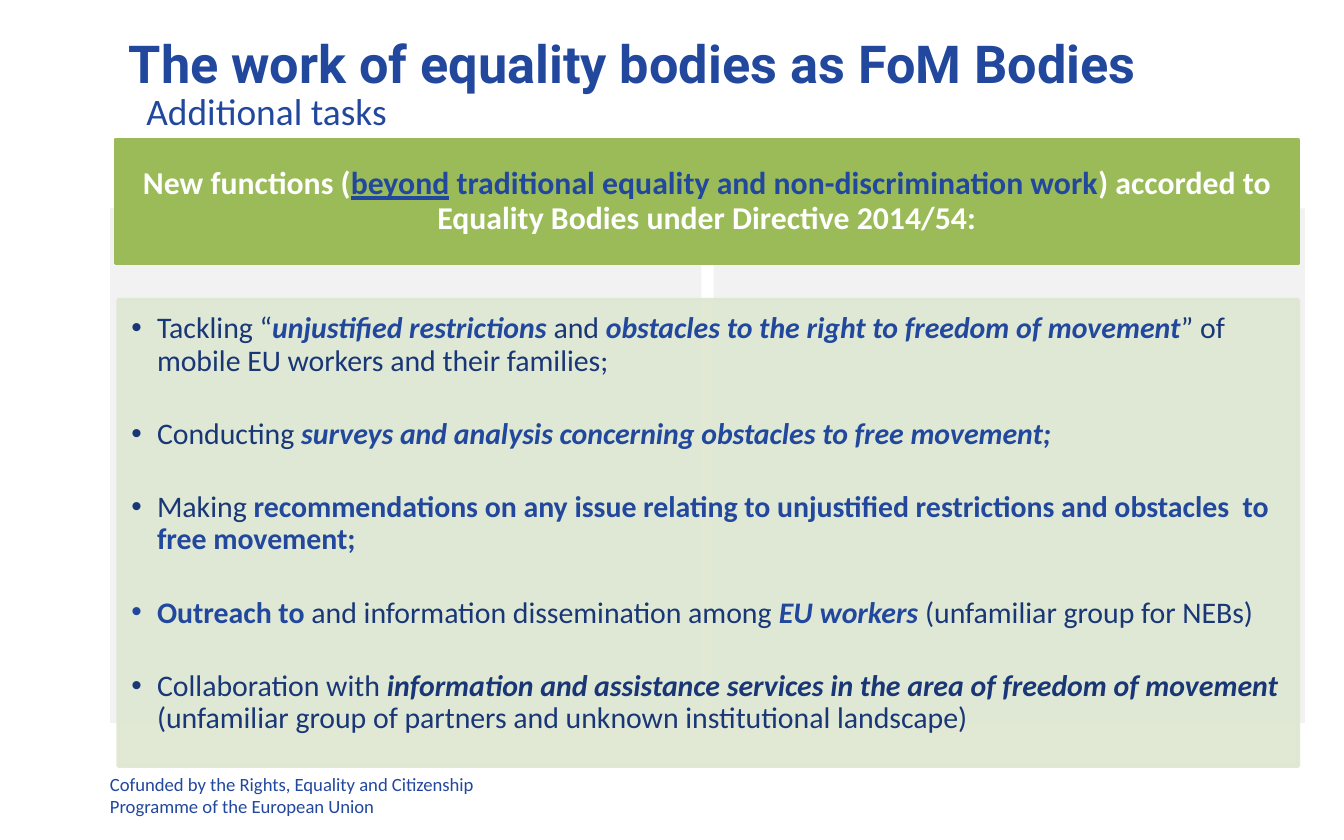
"""Build a slide on the additional tasks of equality bodies."""
from lxml import etree
from pptx import Presentation
from pptx.dml.color import RGBColor
from pptx.enum.shapes import MSO_SHAPE
from pptx.enum.text import MSO_ANCHOR, PP_ALIGN
from pptx.oxml.ns import qn
from pptx.util import Inches, Pt

RECTANGLE = MSO_SHAPE.RECTANGLE
TOP, MIDDLE = MSO_ANCHOR.TOP, MSO_ANCHOR.MIDDLE
LEFT, CENTER = PP_ALIGN.LEFT, PP_ALIGN.CENTER

COLORS = {
    "blue": "22489E",
    "navy": "193676",
    "white": "FFFFFF",
    "green": "9BBB59",
    "pale green": "DEE7D1",
    "gray": "F2F2F2",
}

STYLES = {
    "plain": {"color": "navy"},
    "key": {"color": "blue", "bold": True},
    "key italic": {"color": "blue", "bold": True, "italic": True},
    "navy italic": {"color": "navy", "bold": True, "italic": True},
    "label": {"color": "blue"},
    "banner": {"color": "white", "bold": True},
    "banner underline": {"color": "blue", "bold": True, "underline": True},
}

LABELS = [
    ("Cofunded by the Rights, Equality and Citizenship Programme of the European Union",
     "label", (0.72, 5.7, 2.94, 0.44), "Calibri", 10),
    ("Additional tasks", "label", (0.99, 0.61, 4.72, 0.58), "Calibri", 20),
    ("The work of equality bodies as FoM Bodies", "key", (0.86, 0.18, 8.84, 0.58), "Roboto", 28),
]

BANNER = [
    ("New functions (", "banner"),
    ("beyond", "banner underline"),
    (" traditional equality and non-discrimination work", "key"),
    (") accorded to Equality Bodies under Directive 2014/54:", "banner"),
]

TASKS = [
    [("Tackling “", "plain"),
     ("unjustified restrictions", "key italic"),
     (" and ", "plain"),
     ("obstacles to the right to freedom of movement", "key italic"),
     ("” of mobile EU workers and their families;", "plain")],
    [("Conducting ", "plain"),
     ("surveys and analysis concerning obstacles to free movement;", "key italic")],
    [("Making ", "plain"),
     ("recommendations on any issue relating to unjustified restrictions "
      "and obstacles  to free movement;", "key")],
    [("Outreach to ", "key"),
     ("and information dissemination among ", "plain"),
     ("EU workers ", "key italic"),
     ("(unfamiliar group for NEBs)", "plain")],
    [("Collaboration with ", "plain"),
     ("information and assistance services in the area of freedom of movement ", "navy italic"),
     ("(unfamiliar group of partners and unknown institutional landscape)", "plain")],
]

COLUMN_LEFT, COLUMN_WIDTH, COLUMN_GAP = 0.82, 4.4, 0.09
TASK_GAP = 22


def color(name):
    return RGBColor.from_string(COLORS[name])


def add_panel(slide, box, fill, line_width=0, opacity=100):
    panel = slide.shapes.add_shape(RECTANGLE, *map(Inches, box))
    panel.shadow.inherit = False
    panel.fill.solid()
    panel.fill.fore_color.rgb = color(fill)
    if line_width:
        panel.line.color.rgb = color(fill)
        panel.line.width = Pt(line_width)
    else:
        panel.line.fill.background()
    if opacity < 100:
        for rgb in panel._element.spPr.iter(qn("a:srgbClr")):
            etree.SubElement(rgb, qn("a:alpha"), val=str(opacity * 1000))
    return panel


def set_frame(frame, anchor, insets):
    frame.word_wrap = True
    frame.vertical_anchor = anchor
    frame.margin_left, frame.margin_top, frame.margin_right, frame.margin_bottom = map(Inches, insets)


def add_bullet(paragraph):
    properties = paragraph._p.get_or_add_pPr()
    properties.set("marL", str(Inches(0.19)))
    properties.set("indent", str(Inches(-0.19)))
    etree.SubElement(properties, qn("a:buFont"), typeface="Arial")
    etree.SubElement(properties, qn("a:buChar"), char="•")


def write(paragraph, runs, font_name, size, alignment=LEFT, line_spacing=1.0):
    paragraph.alignment = alignment
    paragraph.line_spacing = line_spacing
    paragraph.font.name = font_name
    paragraph.font.size = Pt(size)
    for text, style_name in runs:
        style = STYLES[style_name]
        run = paragraph.add_run()
        run.text = text
        run.font.color.rgb = color(style["color"])
        run.font.bold = style.get("bold", False)
        run.font.italic = style.get("italic", False)
        run.font.underline = style.get("underline", False)


def add_labels(slide):
    for text, style, box, font_name, size in LABELS:
        frame = slide.shapes.add_textbox(*map(Inches, box)).text_frame
        set_frame(frame, TOP, (0.1, 0.05, 0.1, 0.05))
        write(frame.paragraphs[0], [(text, style)], font_name, size)


def add_tasks(slide):
    panel = add_panel(slide, (0.88, 2.23, 8.78, 3.47), "pale green", 2, 90)
    frame = panel.text_frame
    set_frame(frame, TOP, (0.1, 0.1, 0.14, 0.16))
    for index, runs in enumerate(TASKS):
        paragraph = frame.add_paragraph() if index else frame.paragraphs[0]
        add_bullet(paragraph)
        write(paragraph, runs, "Calibri", 16, line_spacing=0.9)
        if index:
            paragraph.space_before = Pt(TASK_GAP)


def add_banner(slide):
    panel = add_panel(slide, (0.86, 1.04, 8.8, 0.92), "green", 2)
    set_frame(panel.text_frame, MIDDLE, (0.13, 0.08, 0.13, 0.08))
    write(panel.text_frame.paragraphs[0], BANNER, "Calibri", 17, CENTER, 0.9)


def main():
    presentation = Presentation()
    presentation.slide_width, presentation.slide_height = Inches(10), Inches(6.25)
    slide = presentation.slides.add_slide(presentation.slide_layouts[6])
    for column in range(2):
        left = COLUMN_LEFT + column * (COLUMN_WIDTH + COLUMN_GAP)
        add_panel(slide, (left, 1.55, COLUMN_WIDTH, 3.83), "gray")
    add_labels(slide)
    add_tasks(slide)
    add_banner(slide)
    presentation.save("out.pptx")


if __name__ == "__main__":
    main()
